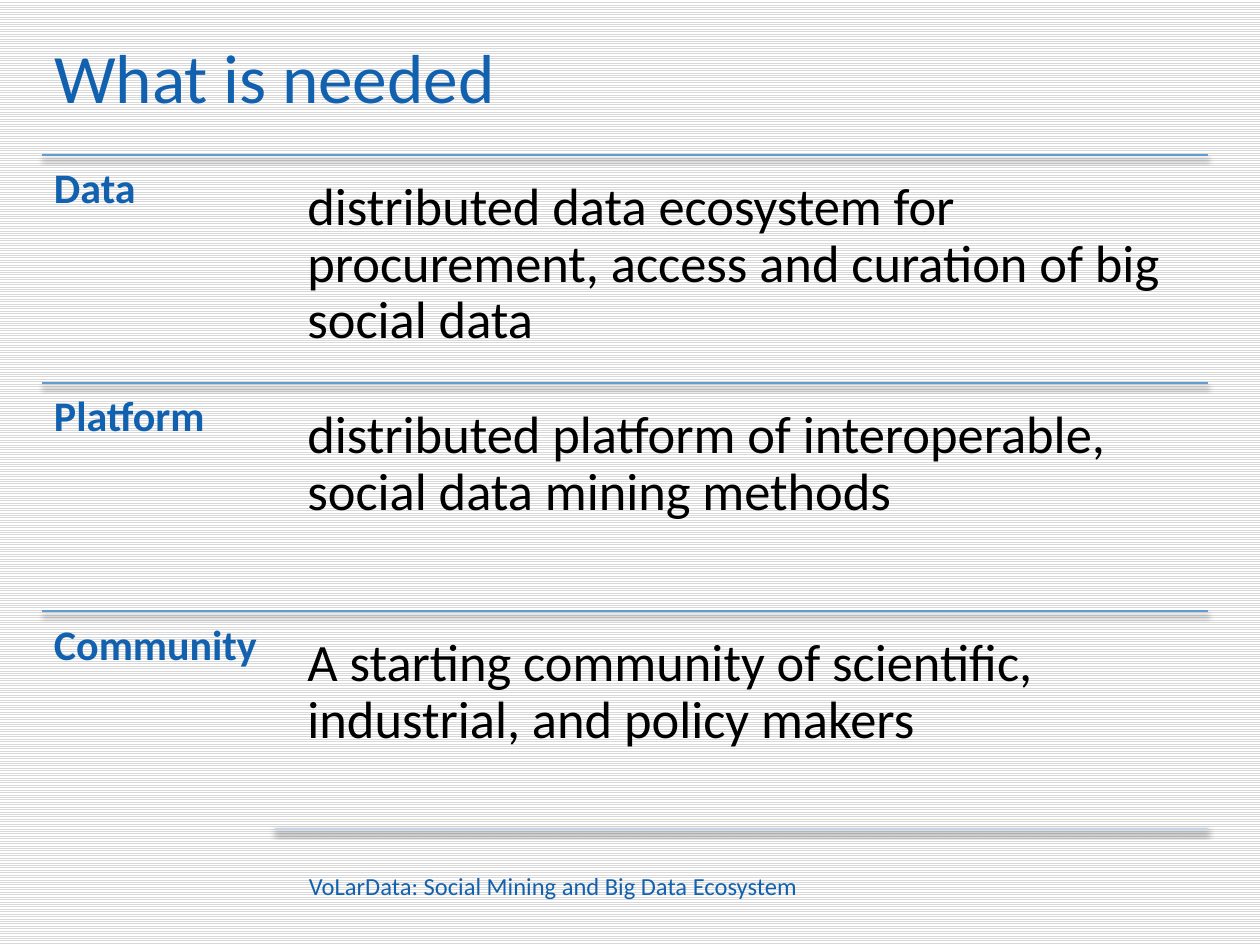
from lxml import etree
from pptx import Presentation
from pptx.dml.color import RGBColor
from pptx.enum.dml import MSO_PATTERN
from pptx.enum.shapes import MSO_CONNECTOR
from pptx.enum.text import MSO_ANCHOR, MSO_AUTO_SIZE, PP_ALIGN
from pptx.oxml.ns import qn
from pptx.util import Inches, Pt

STRAIGHT = MSO_CONNECTOR.STRAIGHT
TOP, MIDDLE = MSO_ANCHOR.TOP, MSO_ANCHOR.MIDDLE
LEFT, CENTER = PP_ALIGN.LEFT, PP_ALIGN.CENTER
BLUE, BLACK, RULE, PALE = "1161AF", "000000", "629DD1", "C5D5E9"

TITLE = "What is needed"
FOOTER = "VoLarData: Social Mining and Big Data Ecosystem"
NEEDS = [
    ("Data", "distributed data ecosystem for procurement, access and "
             "curation of big social data"),
    ("Platform", "distributed platform of interoperable, social data mining methods"),
    ("Community", "A starting community of scientific, industrial, and policy makers"),
]
X, RIGHT, Y, STEP = 0.33, 9.59, 1.23, 1.81
LABEL_W, TEXT_X, TEXT_H, GAP = 1.85, 2.32, 1.65, 0.08


def color(value):
    return RGBColor.from_string(value)


def write(shape, text, size, tint, bold=False, anchor=TOP, align=LEFT,
          inset=(0.1, 0.05), spacing=None):
    frame = shape.text_frame
    frame.word_wrap = True
    frame.auto_size = MSO_AUTO_SIZE.NONE
    frame.vertical_anchor = anchor
    frame.margin_left = frame.margin_right = Inches(inset[0])
    frame.margin_top = frame.margin_bottom = Inches(inset[1])
    par = frame.paragraphs[0]
    par.alignment = align
    if spacing:
        par.line_spacing = spacing
    run = par.add_run()
    run.text = text
    run.font.name = "Calibri"
    run.font.size = Pt(size)
    run.font.bold = bold
    run.font.color.rgb = color(tint)


def box(shapes, x, y, w, h):
    return shapes.add_textbox(Inches(x), Inches(y), Inches(w), Inches(h))


def rule(shapes, x, y, tint, width):
    """Draw a horizontal line to the right margin, with a soft shadow below."""
    line = shapes.add_connector(STRAIGHT, Inches(x), Inches(y), Inches(RIGHT), Inches(y))
    line.line.color.rgb = color(tint)
    line.line.width = Pt(width)
    effects = etree.SubElement(line._element.spPr, qn("a:effectLst"))
    shadow = etree.SubElement(effects, qn("a:outerShdw"), blurRad=str(Pt(3)),
                              dist=str(Pt(2.4)), dir="5400000", rotWithShape="0")
    tone = etree.SubElement(shadow, qn("a:srgbClr"), val=BLACK)
    etree.SubElement(tone, qn("a:alpha"), val="45000")


def main():
    deck = Presentation()
    deck.slide_width, deck.slide_height = Inches(10), Inches(7.5)
    slide = deck.slides.add_slide(deck.slide_layouts[5])
    fill = slide.background.fill
    fill.patterned()
    fill.pattern = MSO_PATTERN.LIGHT_HORIZONTAL
    fill.fore_color.rgb = color("D9D9D9")
    fill.back_color.rgb = color("FFFFFF")

    title = slide.shapes.title
    title.left, title.top = Inches(X), Inches(0.25)
    title.width, title.height = Inches(RIGHT - X), Inches(0.71)
    write(title, TITLE, 39.6, BLUE, anchor=MIDDLE)
    write(box(slide.shapes, 1.03, 6.83, 6.72, 0.4), FOOTER, 14, BLUE,
          anchor=MIDDLE, align=CENTER)

    rows = slide.shapes.add_group_shape().shapes
    for i, (label, text) in enumerate(NEEDS):
        y = Y + i * STEP
        rule(rows, X, y, RULE, 0.79)
        write(box(rows, X, y, LABEL_W, STEP), label, 24, BLUE, bold=True,
              inset=(0.1, 0.1), spacing=0.9)
        write(box(rows, TEXT_X, y + GAP, RIGHT - TEXT_X, TEXT_H), text, 30, BLACK,
              inset=(0.12, 0.12), spacing=0.9)
    rule(rows, X + LABEL_W, Y + len(NEEDS) * STEP - GAP, PALE, 1.5)
    deck.save("out.pptx")


if __name__ == "__main__":
    main()
